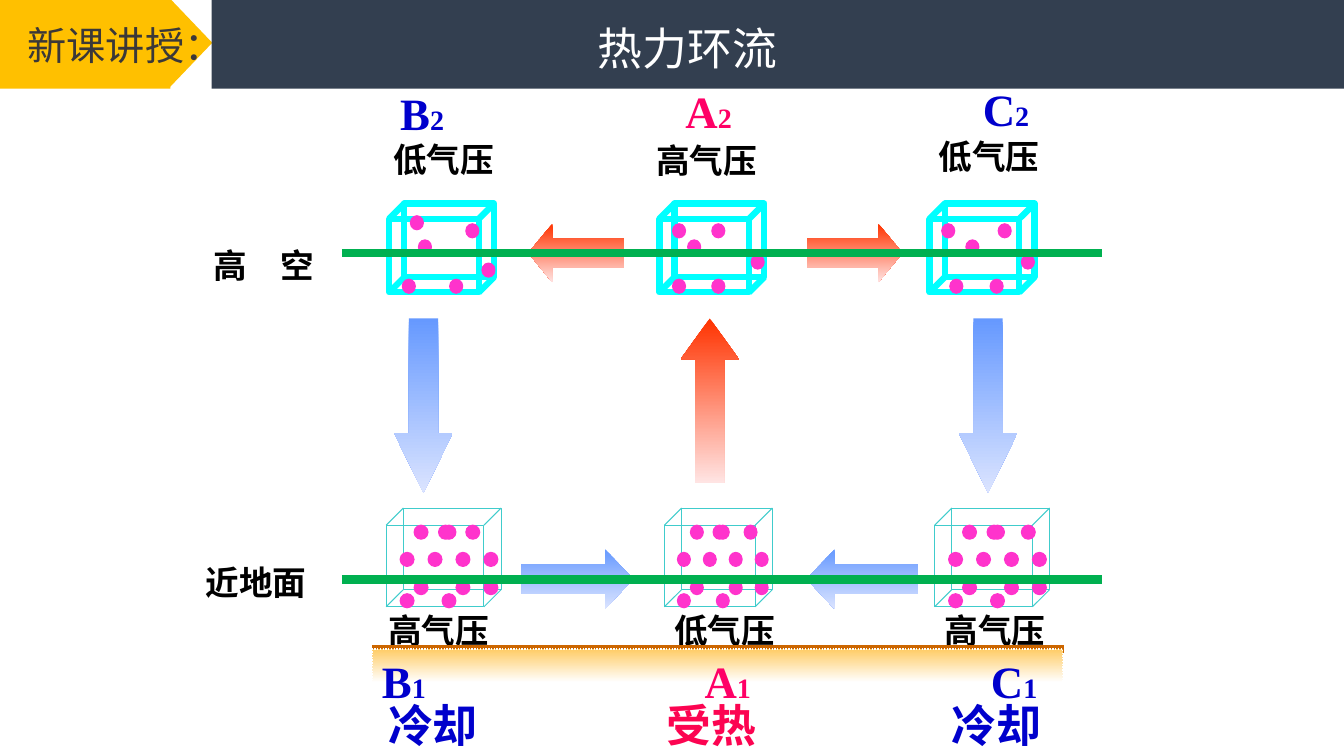
from lxml.etree import SubElement
from pptx import Presentation
from pptx.dml.color import RGBColor
from pptx.enum.dml import MSO_LINE
from pptx.enum.shapes import MSO_CONNECTOR, MSO_SHAPE as Preset
from pptx.enum.text import MSO_ANCHOR, PP_ALIGN
from pptx.oxml.ns import qn
from pptx.util import Inches, Pt

COLORS = {
    "black": "000000", "white": "FFFFFF", "cold": "0000CC", "warm": "FC0451",
    "warm letter": "FF0066", "dot": "FF33CC", "upper cube": "00FFFF",
    "lower cube": "40CCCC", "red": "FF3300", "pale red": "FFE4E3",
    "blue": "6699FF", "pale blue": "DBE4FF", "amber": "FFC000",
    "navy": "333F50", "grey": "3B3838", "earth": "CC6600",
    "sand": "FFCC66", "level": "00B050",
}
EDGE = MSO_CONNECTOR.STRAIGHT

deck = Presentation()
deck.slide_width, deck.slide_height = Inches(13.33), Inches(7.5)
slide = deck.slides.add_slide(deck.slide_layouts[5])
heading = slide.shapes.title


def write(text, x, y, w, h, size=24, color="black", font="Arial", bold=True,
          align=PP_ALIGN.LEFT, suffix="", box=None):
    box = box or slide.shapes.add_textbox(0, 0, 0, 0)
    box.left, box.top, box.width, box.height = map(Inches, (x, y, w, h))
    frame = box.text_frame
    frame.word_wrap = True
    frame.vertical_anchor = MSO_ANCHOR.TOP
    paragraph = frame.paragraphs[0]
    paragraph.alignment = align
    for part, points in ((text, size), (suffix, 20)):
        if part:
            run = paragraph.add_run()
            run.text = part
            run.font.size, run.font.bold, run.font.name = Pt(points), bold, font
            run.font.color.rgb = RGBColor.from_string(COLORS[color])
            SubElement(run.font._element, qn("a:ea"), typeface="Noto Sans CJK SC")


def draw(kind, x, y, w, h, fill=(), line=None, width=0.75):
    if kind is EDGE:
        item = slide.shapes.add_connector(
            kind, Inches(x), Inches(y), Inches(x + w), Inches(y + h))
    else:
        item = slide.shapes.add_shape(kind, *map(Inches, (x, y, w, h)))
        item.shadow.inherit = False
        if len(fill) == 2:
            item.fill.gradient()
            item.fill.gradient_angle = 270
            for stop, name in zip(item.fill.gradient_stops, fill):
                stop.color.rgb = RGBColor.from_string(COLORS[name])
        elif fill:
            item.fill.solid()
            item.fill.fore_color.rgb = RGBColor.from_string(COLORS[fill[0]])
        else:
            item.fill.background()
    if line:
        item.line.color.rgb = RGBColor.from_string(COLORS[line])
        item.line.width = Pt(width)
    else:
        item.line.fill.background()
    if kind is EDGE:
        SubElement(item._element.spPr, qn("a:effectLst"))
    return item


sparse_air = [
    (3.83, [(0.16, 0.61), (0.32, 0.22), (0.63, 0.61),
            (0.79, 0.06), (0.24, -0.02), (0.95, 0.45)]),
    (6.51, [(0.31, 0.22), (0.16, 0.61), (0.94, 0.37),
            (0.55, 0.61), (0.55, 0.06), (0.16, 0.06)]),
    (9.19, [(0.94, 0.37), (0.71, 0.06), (0.15, 0.06),
            (0.39, 0.22), (0.63, 0.61), (0.23, 0.61)]),
]
dense_rows = [(0.68, (1, 4)), (0.55, (2, 5, 7)), (0.27, (1, 3, 5, 7)),
              (0, (2, 4, 3.75))]

cubes = [(x + 0.03, 2.17, 0.89, 0.73, 0.15, "upper cube", 4.5, 0.13,
          [(dx - 0.03, dy - 0.01) for dx, dy in dots])
         for x, dots in sparse_air]
for x, w, extra in ((3.83, 0.97, 0.79), (6.59, 0.9, 0.79), (9.27, 0.97, 0.86)):
    unit = w / 7
    dots = [(unit * column, dy) for dy, columns in dense_rows for column in columns]
    cubes.append((x, 5.21, w, 0.81, 0.17, "lower cube", 0.75, unit,
                  dots + [(extra, 0)]))

for x, y, w, h, depth, color, width, dot_width, dots in cubes:
    draw(Preset.RECTANGLE, x + depth, y - depth, w, h, line=color, width=width)
    for corner_x in (x, x + w):
        for corner_y in (y, y + h):
            draw(EDGE, corner_x, corner_y, depth, -depth, line=color, width=width)
    draw(Preset.RECTANGLE, x, y, w, h, line=color, width=width)
    for dx, dy in dots:
        draw(Preset.OVAL, x + dx, y + dy, dot_width, 0.14, ("dot",), "dot")

for kind, x, y, w, h, head, fill in (
    (Preset.UP_ARROW, 6.75, 3.16, 0.58, 1.63, 0.7, ("red", "pale red")),
    (Preset.DOWN_ARROW, 9.51, 3.16, 0.58, 1.73, 1.02, ("blue", "pale blue")),
    (Preset.DOWN_ARROW, 3.91, 3.16, 0.58, 1.73, 1.02, ("blue", "pale blue")),
    (Preset.RIGHT_ARROW, 8, 2.22, 0.95, 0.58, 0.41, ("red", "pale red")),
    (Preset.LEFT_ARROW, 5.24, 2.22, 0.95, 0.58, 0.41, ("red", "pale red")),
    (Preset.RIGHT_ARROW, 5.17, 5.45, 1.11, 0.59, 0.47, ("blue", "pale blue")),
    (Preset.LEFT_ARROW, 8, 5.45, 1.11, 0.59, 0.47, ("blue", "pale blue")),
):
    flow = draw(kind, x, y, w, h, fill)
    flow.adjustments[0], flow.adjustments[1] = 0.5, head

for label, x, y, w in (
    ("近地面", 1.94, 5.53, 1.57), ("高　空", 2.02, 2.38, 1.52),
    ("低气压", 3.8, 1.33, 2.2), ("高气压", 6.41, 1.34, 1.57),
    ("低气压", 9.21, 1.3, 1.97), ("高气压", 3.75, 6, 2.05),
    ("低气压", 6.59, 6, 1.81), ("高气压", 9.27, 6, 1.97),
):
    write(label, x, y, w, 0.5)

for label, x, w, color in (("冷却", 3.75, 2.52, "cold"), ("受热", 6.51, 2.05, "warm"),
                           ("冷却", 9.34, 2.12, "cold")):
    write(label, x, 6.87, w, 0.63, size=32, color=color)

draw(Preset.RECTANGLE, 0, 0, 1.69, 0.88, ("amber",))
pointer = draw(Preset.ISOSCELES_TRIANGLE, 1.44, 0.21, 0.9, 0.43, ("amber",))
pointer.rotation = 90
write("新课讲授：", 0, 0.16, 2.1, 0.57, size=28, color="grey",
      font="Noto Sans CJK SC", bold=False, align=PP_ALIGN.CENTER)
banner = draw(Preset.RECTANGLE, 2.1, 0, 11.23, 0.88, ("navy",))
banner._element.addnext(heading._element)
write("热力环流", 5.83, 0.16, 4.62, 0.64, size=32, color="white",
      font="Noto Sans CJK SC", bold=False, box=heading)

draw(EDGE, 3.69, 6.44, 6.86, 0, line="earth", width=6)
ground = draw(Preset.RECTANGLE, 3.69, 6.44, 6.85, 0.33, ("sand", "white"), "white", 1)
ground.line.dash_style = MSO_LINE.ROUND_DOT

for letter, number, x, y, w, color in (
    ("A", "1", 6.89, 6.44, 1.26, "warm letter"), ("B", "1", 3.69, 6.44, 0.99, "cold"),
    ("C", "1", 9.73, 6.44, 0.8, "cold"), ("A", "2", 6.7, 0.78, 0.97, "warm letter"),
    ("B", "2", 3.87, 0.8, 0.87, "cold"), ("C", "2", 9.65, 0.76, 0.73, "cold"),
):
    write(letter, x, y, w, 0.64, size=32, color=color,
          font="Times New Roman", suffix=number)

for y in (2.51, 5.75):
    draw(EDGE, 3.39, y, 7.54, 0, line="level", width=6)

deck.save("out.pptx")
